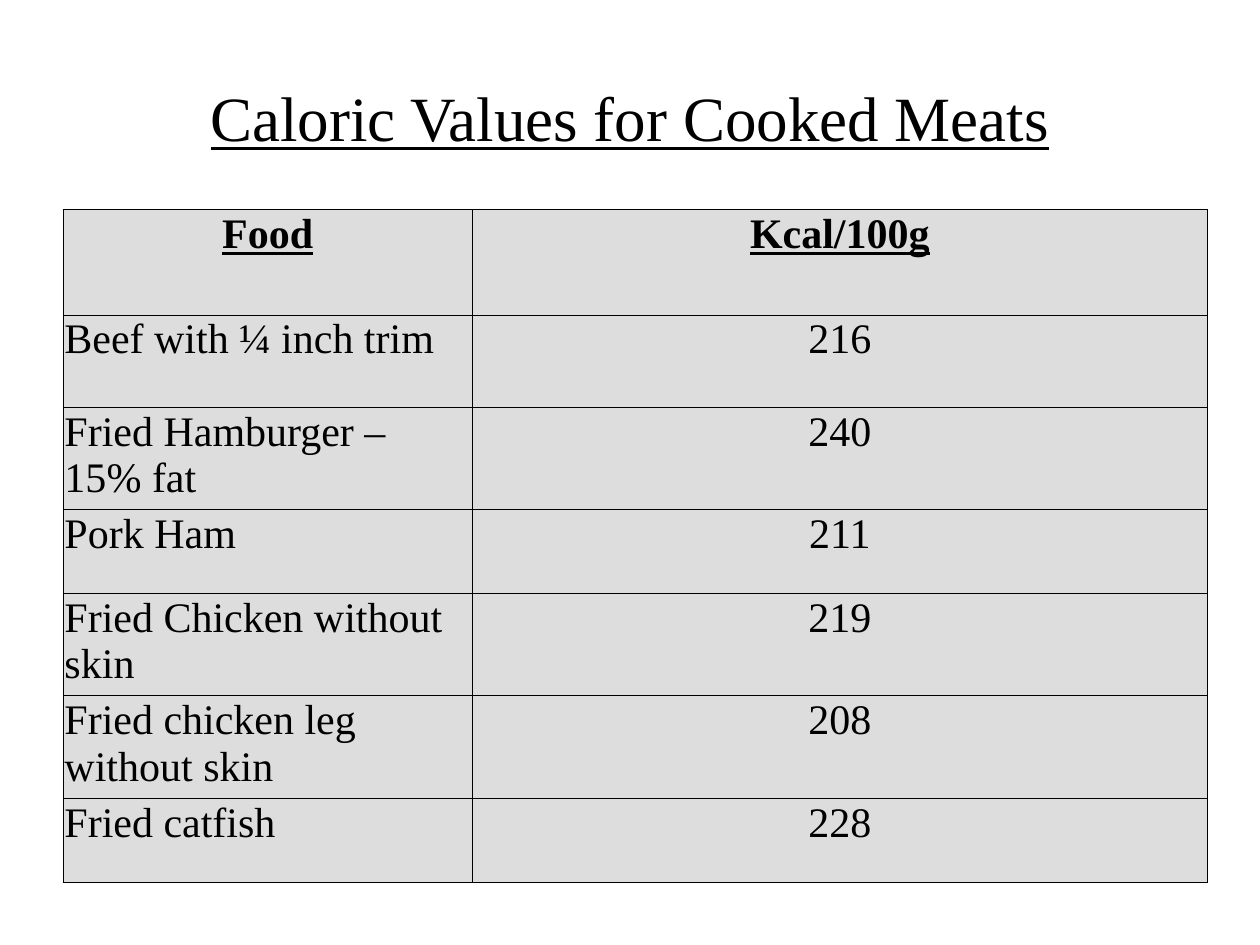
from dataclasses import dataclass

from lxml.etree import SubElement
from pptx import Presentation
from pptx.dml.color import RGBColor
from pptx.enum.text import MSO_ANCHOR as Anchor, PP_ALIGN as Align
from pptx.oxml.ns import qn
from pptx.util import Cm, Pt

TITLE = "Caloric Values for Cooked Meats"
HEADER = ("Food", "Kcal/100g")
MEATS = [
    ("Beef with ¼ inch trim", 216),
    ("Fried Hamburger – 15% fat", 240),
    ("Pork Ham", 211),
    ("Fried Chicken without skin", 219),
    ("Fried chicken leg without skin", 208),
    ("Fried catfish", 228),
]
COLUMN_WIDTHS = (8.25, 14.82)
ROW_HEIGHTS = (2.12, 1.86, 1.95, 1.69, 1.9, 1.9, 1.69)
LEFT, TITLE_TOP, TABLE_TOP = 1.27, 0.76, 4.23
TITLE_WIDTH, TITLE_HEIGHT = 22.86, 3.18


@dataclass(frozen=True)
class Theme:
    font: str = "Times New Roman"
    ink: str = "000000"
    cell: str = "DDDDDD"
    title_size: int = 36
    table_size: int = 24
    border: float = 0.5


THEME = Theme()


def write(text_frame, text, size, align, bold=False, underline=False):
    """Fill a text frame with one formatted paragraph."""
    text_frame.text = text
    paragraph = text_frame.paragraphs[0]
    paragraph.alignment = align
    font = paragraph.runs[0].font
    font.name, font.size = THEME.font, Pt(size)
    font.bold, font.underline = bold, underline
    font.color.rgb = RGBColor.from_string(THEME.ink)


def style_cell(cell):
    """Set the margins, borders and fill of a table cell."""
    cell.margin_left = cell.margin_right = cell.margin_top = Cm(0.03)
    cell.margin_bottom = 0
    properties = cell._tc.get_or_add_tcPr()
    for side in ("lnL", "lnR", "lnT", "lnB"):
        line = SubElement(properties, qn(f"a:{side}"), w=str(Pt(THEME.border)))
        fill = SubElement(line, qn("a:solidFill"))
        SubElement(fill, qn("a:srgbClr"), val=THEME.ink)
    cell.fill.solid()
    cell.fill.fore_color.rgb = RGBColor.from_string(THEME.cell)


def add_title(slide):
    """Add the underlined slide title."""
    shape = slide.shapes.add_textbox(
        Cm(LEFT), Cm(TITLE_TOP), Cm(TITLE_WIDTH), Cm(TITLE_HEIGHT))
    text_frame = shape.text_frame
    text_frame.word_wrap = True
    text_frame.vertical_anchor = Anchor.MIDDLE
    write(text_frame, TITLE, THEME.title_size, Align.CENTER, underline=True)


def add_calorie_table(slide):
    """Add the table of meats and their caloric values."""
    rows = [HEADER, *MEATS]
    table = slide.shapes.add_table(
        len(rows), len(HEADER), Cm(LEFT), Cm(TABLE_TOP),
        Cm(sum(COLUMN_WIDTHS)), Cm(sum(ROW_HEIGHTS))).table
    for column, width in zip(table.columns, COLUMN_WIDTHS):
        column.width = Cm(width)
    for row, height in zip(table.rows, ROW_HEIGHTS):
        row.height = Cm(height)
    for row_index, values in enumerate(rows):
        heading = row_index == 0
        for column_index, value in enumerate(values):
            cell = table.cell(row_index, column_index)
            align = Align.CENTER if heading or column_index else Align.LEFT
            write(cell.text_frame, str(value), THEME.table_size, align, heading, heading)
            style_cell(cell)


def main():
    """Build and save the slide."""
    presentation = Presentation()
    presentation.slide_width, presentation.slide_height = Cm(25.4), Cm(19.05)
    slide = presentation.slides.add_slide(presentation.slide_layouts[6])
    add_title(slide)
    add_calorie_table(slide)
    presentation.save("out.pptx")


if __name__ == "__main__":
    main()
